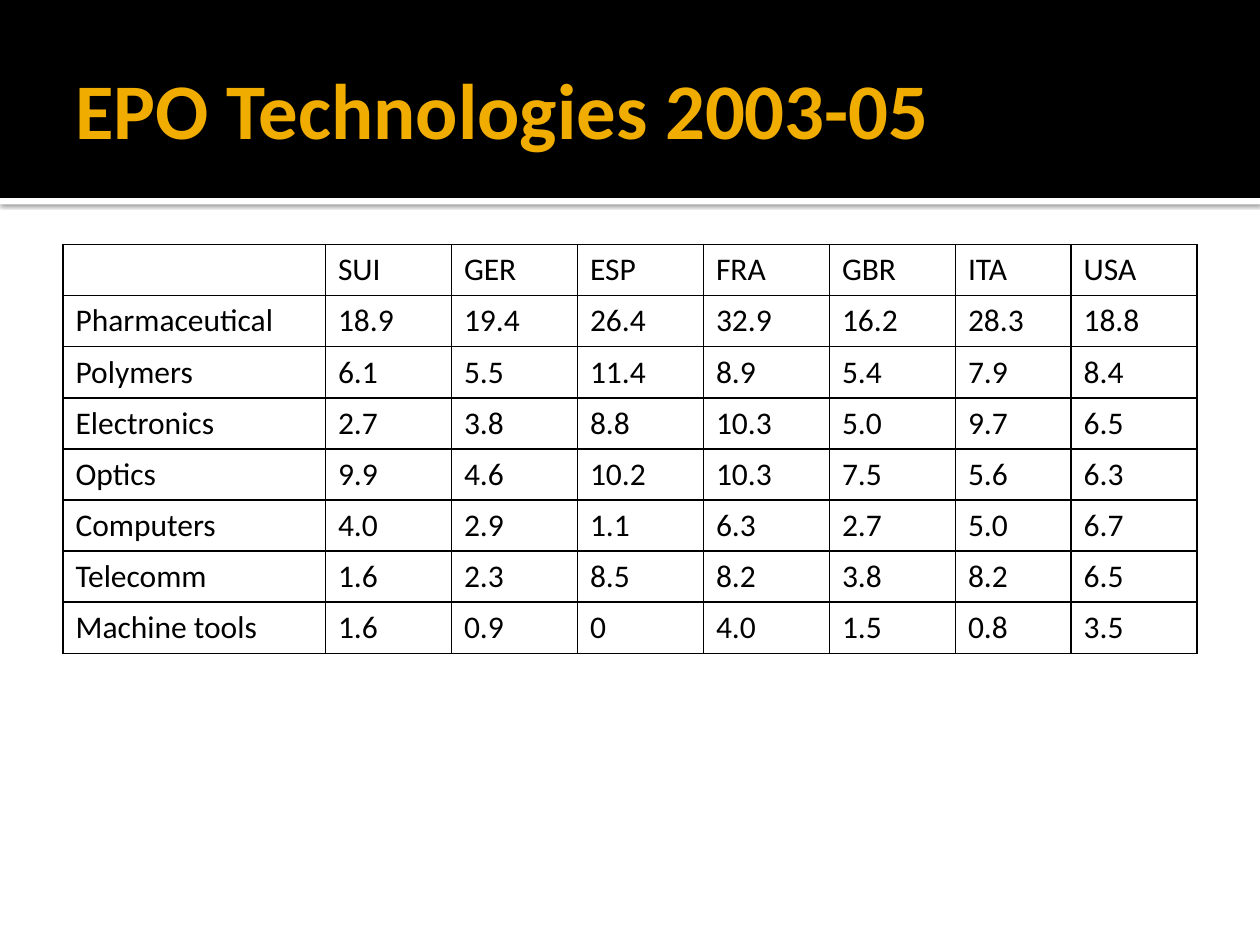
"""Build the slide on patent technologies by country."""
from pptx import Presentation
from pptx.dml.color import RGBColor
from pptx.enum.shapes import MSO_SHAPE
from pptx.enum.text import MSO_ANCHOR, PP_ALIGN
from pptx.oxml import parse_xml
from pptx.oxml.ns import nsdecls, qn
from pptx.util import Cm, Pt

TITLE = "EPO Technologies 2003-05"
ROWS = [
    ("", "SUI", "GER", "ESP", "FRA", "GBR", "ITA", "USA"),
    ("Pharmaceutical", "18.9", "19.4", "26.4", "32.9", "16.2", "28.3", "18.8"),
    ("Polymers", "6.1", "5.5", "11.4", "8.9", "5.4", "7.9", "8.4"),
    ("Electronics", "2.7", "3.8", "8.8", "10.3", "5.0", "9.7", "6.5"),
    ("Optics", "9.9", "4.6", "10.2", "10.3", "7.5", "5.6", "6.3"),
    ("Computers", "4.0", "2.9", "1.1", "6.3", "2.7", "5.0", "6.7"),
    ("Telecomm", "1.6", "2.3", "8.5", "8.2", "3.8", "8.2", "6.5"),
    ("Machine tools", "1.6", "0.9", "0", "4.0", "1.5", "0.8", "3.5"),
]
WIDTHS = [5.29] + [2.54] * 5 + [2.33, 2.54]
ROW_H = 1.03
WIDE, HIGH = 25.4, 19.05
EDGE = 1.27
BAND_H = 3.99
BLACK, WHITE, GOLD = "000000", "FFFFFF", "F0AD00"


def paint(item, color):
    item.solid()
    item.fore_color.rgb = RGBColor.from_string(color)


def style(frame, size, color, bold=False):
    for run in frame.paragraphs[0].runs:
        run.font.name = "Calibri"
        run.font.size = Pt(size)
        run.font.bold = bold
        run.font.color.rgb = RGBColor.from_string(color)


def add_band(slide, top, height, color):
    band = slide.shapes.add_shape(
        MSO_SHAPE.RECTANGLE, Cm(0), Cm(top), Cm(WIDE), Cm(height))
    paint(band.fill, color)
    band.line.fill.background()
    band.shadow.inherit = False
    return band


def add_shade(shape):
    shade = parse_xml(
        f'<a:outerShdw {nsdecls("a")} blurRad="{Pt(2.5)}" dist="{Pt(0.8)}" '
        f'dir="5400000" algn="tl" rotWithShape="0"><a:srgbClr val="{BLACK}">'
        '<a:alpha val="60000"/></a:srgbClr></a:outerShdw>')
    shape._element.spPr.find(qn("a:effectLst")).append(shade)


def set_title(title):
    title.left, title.top = Cm(EDGE), Cm(0.43)
    title.width, title.height = Cm(WIDE - 2 * EDGE), Cm(3.48)
    frame = title.text_frame
    frame.text = TITLE
    frame.word_wrap = True
    frame.vertical_anchor = MSO_ANCHOR.MIDDLE
    frame.margin_left = Cm(0.25)
    frame.margin_right = frame.margin_top = frame.margin_bottom = Cm(0.13)
    frame.paragraphs[0].alignment = PP_ALIGN.LEFT
    style(frame, 45, GOLD, True)


def add_lines(cell):
    props = cell._tc.get_or_add_tcPr()
    for side in "LRTB":
        props.append(parse_xml(
            f'<a:ln{side} {nsdecls("a")} w="{Pt(1)}"><a:solidFill>'
            f'<a:srgbClr val="{BLACK}"/></a:solidFill></a:ln{side}>'))


def add_grid(slide):
    frame = slide.shapes.add_table(
        len(ROWS), len(WIDTHS), Cm(EDGE), Cm(4.93),
        Cm(sum(WIDTHS)), Cm(ROW_H * len(ROWS)))
    table = frame.table
    table.first_row = table.horz_banding = False
    for column, width in zip(table.columns, WIDTHS):
        column.width = Cm(width)
    for row, words in zip(table.rows, ROWS):
        row.height = Cm(ROW_H)
        for cell, word in zip(row.cells, words):
            cell.text_frame.text = word
            style(cell.text_frame, 18, BLACK)
            add_lines(cell)
            cell.fill.background()


def main():
    deck = Presentation()
    deck.slide_width, deck.slide_height = Cm(WIDE), Cm(HIGH)
    slide = deck.slides.add_slide(deck.slide_layouts[5])
    paint(slide.background.fill, WHITE)
    title = slide.shapes.title
    strip = add_band(slide, BAND_H, 0.13, WHITE)
    add_shade(strip)
    band = add_band(slide, 0, BAND_H, BLACK)
    for shape in (strip, band):
        title._element.addprevious(shape._element)
    set_title(title)
    add_grid(slide)
    deck.save("out.pptx")


if __name__ == "__main__":
    main()
